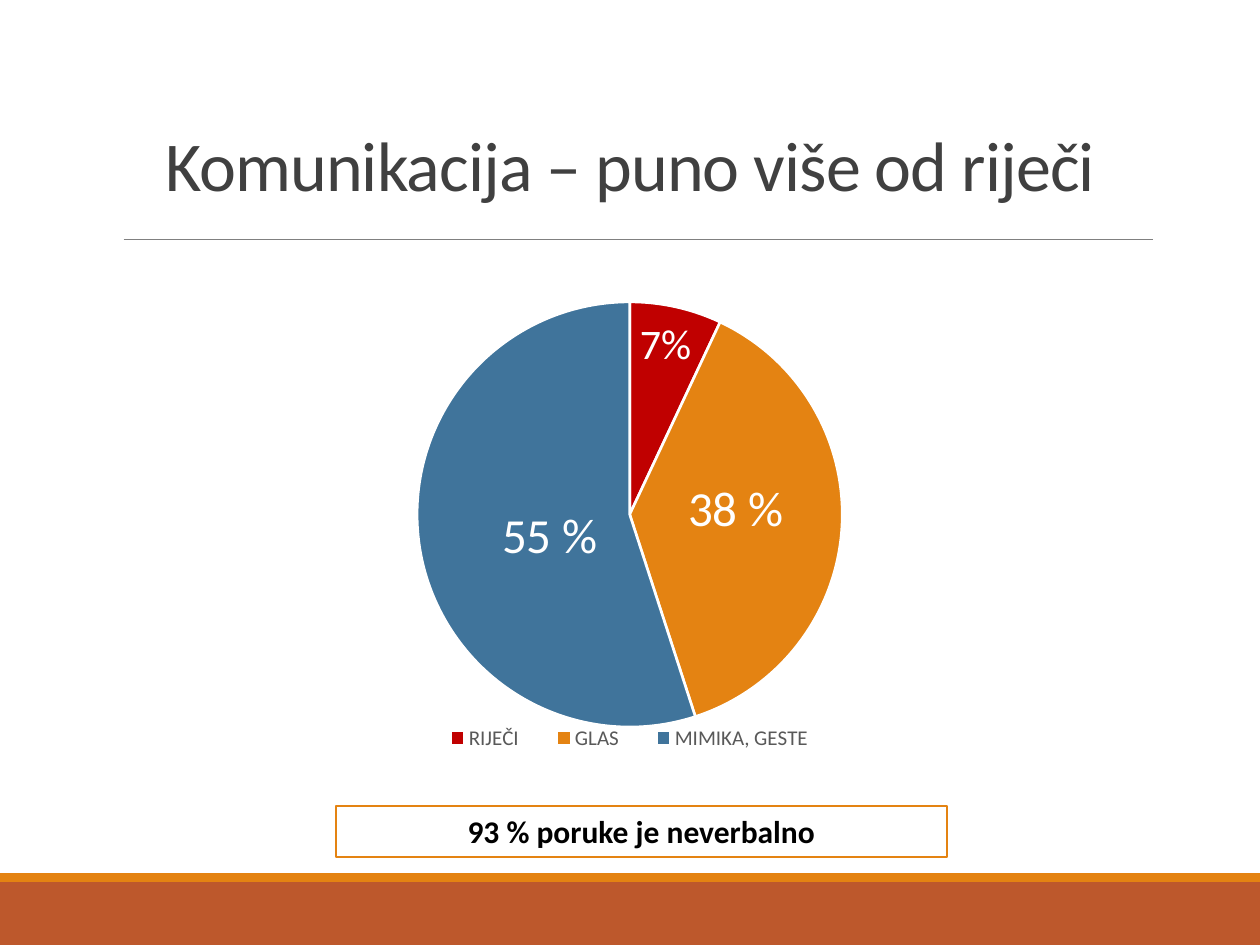
import pptx
import pptx.chart.data
import pptx.dml.color
import pptx.enum.chart
import pptx.enum.shapes
import pptx.enum.text
import pptx.oxml
import pptx.oxml.ns
import pptx.util
from pptx.util import Cm

ORANGE = "E48312"
CHART_NS = pptx.oxml.ns.nsdecls("c")


def rgb(hex_colour):
    return pptx.dml.color.RGBColor.from_string(hex_colour)


def write(frame, text, size, colour, bold=False, spacing=None, line_spacing=None):
    paragraph = frame.paragraphs[0]
    paragraph.alignment = pptx.enum.text.PP_ALIGN.CENTER
    if line_spacing:
        paragraph.line_spacing = line_spacing
    run = paragraph.add_run()
    run.text = text
    run.font.name = "Calibri"
    run.font.size = pptx.util.Pt(size)
    run.font.bold = bold
    run.font.color.rgb = rgb(colour)
    if spacing is not None:
        run.font._element.set("spc", str(spacing))


presentation = pptx.Presentation()
presentation.slide_width = Cm(25.4)
presentation.slide_height = Cm(19.05)
slide = presentation.slides.add_slide(presentation.slide_layouts[5])

for top, height, colour in [(17.78, 1.27, "BD582C"), (17.6, 0.18, ORANGE)]:
    footer_band = slide.shapes.add_shape(
        pptx.enum.shapes.MSO_SHAPE.RECTANGLE, 0, Cm(top), Cm(25.4), Cm(height))
    footer_band.shadow.inherit = False
    footer_band.fill.solid()
    footer_band.fill.fore_color.rgb = rgb(colour)
    footer_band.line.fill.background()

title_rule = slide.shapes.add_connector(
    pptx.enum.shapes.MSO_CONNECTOR.STRAIGHT, Cm(2.49), Cm(4.83), Cm(23.24), Cm(4.83))
title_rule.line.color.rgb = rgb("808080")
title_rule.line.width = pptx.util.Pt(0.5)
title_rule._element.spPr.append(
    pptx.oxml.parse_xml(f'<a:effectLst {pptx.oxml.ns.nsdecls("a")}/>'))

title = slide.shapes.title
title.left, title.top, title.width, title.height = Cm(2.22), Cm(2.2), Cm(20.96), Cm(2.08)
title.text_frame.auto_size = pptx.enum.text.MSO_AUTO_SIZE.NONE
title.text_frame.vertical_anchor = pptx.enum.text.MSO_ANCHOR.BOTTOM
write(title.text_frame, "Komunikacija – puno više od riječi", size=40, colour="404040",
      spacing=-50, line_spacing=0.85)

message_shares = pptx.chart.data.CategoryChartData()
message_shares.categories = ["RIJEČI", "GLAS", "MIMIKA, GESTE"]
message_shares.add_series("Series 1", (7, 38, 55))
pie = slide.shapes.add_chart(
    pptx.enum.chart.XL_CHART_TYPE.PIE, Cm(4.23), Cm(4.62), Cm(16.93), Cm(11.28),
    message_shares).chart
pie.has_title = False
pie.font.name = "Calibri"
pie.font.size = pptx.util.Pt(10)
pie.has_legend = True
pie.legend.position = pptx.enum.chart.XL_LEGEND_POSITION.BOTTOM
pie.legend.include_in_layout = False
pie.legend.font.name = "Calibri"
pie.legend.font.size = pptx.util.Pt(12)
pie.legend.font.color.rgb = rgb("595959")
pie.plots[0].vary_by_categories = True

plot_area = pie._chartSpace.chart.plotArea
for old_layout in plot_area.findall(pptx.oxml.ns.qn("c:layout")):
    plot_area.remove(old_layout)
plot_area.insert(0, pptx.oxml.parse_xml(
    f'<c:layout {CHART_NS}><c:manualLayout><c:layoutTarget val="inner"/>'
    '<c:xMode val="edge"/><c:yMode val="edge"/><c:x val="0.24"/><c:y val="0.13"/>'
    '<c:w val="0.52"/><c:h val="0.76"/></c:manualLayout></c:layout>'))
pie.legend._element.find(pptx.oxml.ns.qn("c:legendPos")).addnext(pptx.oxml.parse_xml(
    f'<c:layout {CHART_NS}><c:manualLayout><c:xMode val="edge"/><c:yMode val="edge"/>'
    '<c:x val="0.25"/><c:y val="0.88"/><c:w val="0.5"/><c:h val="0.06"/>'
    '</c:manualLayout></c:layout>'))

POSITION = pptx.enum.chart.XL_LABEL_POSITION
slices = [
    ("7%", 24, "C00000", POSITION.INSIDE_END, 0.02, 0.01),
    ("38 %", 28, ORANGE, POSITION.CENTER, 0, -0.02),
    ("55 %", 28, "40749B", POSITION.CENTER, 0.03, 0.01),
]
for index, (share, size, colour, position, shift_x, shift_y) in enumerate(slices):
    point = pie.plots[0].series[0].points[index]
    point.format.fill.solid()
    point.format.fill.fore_color.rgb = rgb(colour)
    point.format.line.color.rgb = rgb("FFFFFF")
    point.format.line.width = pptx.util.Pt(1.5)
    write(point.data_label.text_frame, share, size=size, colour="FFFFFF")
    point.data_label.position = position
    label = point.data_label._dLbl
    label.find(pptx.oxml.ns.qn("c:idx")).addnext(pptx.oxml.parse_xml(
        f'<c:layout {CHART_NS}><c:manualLayout><c:x val="{shift_x}"/>'
        f'<c:y val="{shift_y}"/></c:manualLayout></c:layout>'))

conclusion = slide.shapes.add_shape(
    pptx.enum.shapes.MSO_SHAPE.RECTANGLE, Cm(6.77), Cm(16.25), Cm(12.32), Cm(1.02))
conclusion.shadow.inherit = False
conclusion.fill.solid()
conclusion.fill.fore_color.rgb = rgb("FFFFFF")
conclusion.line.color.rgb = rgb(ORANGE)
conclusion.line.width = pptx.util.Pt(1.25)
conclusion.text_frame.word_wrap = True
write(conclusion.text_frame, "93 % poruke je neverbalno", size=18, colour="000000", bold=True)

presentation.save("out.pptx")
